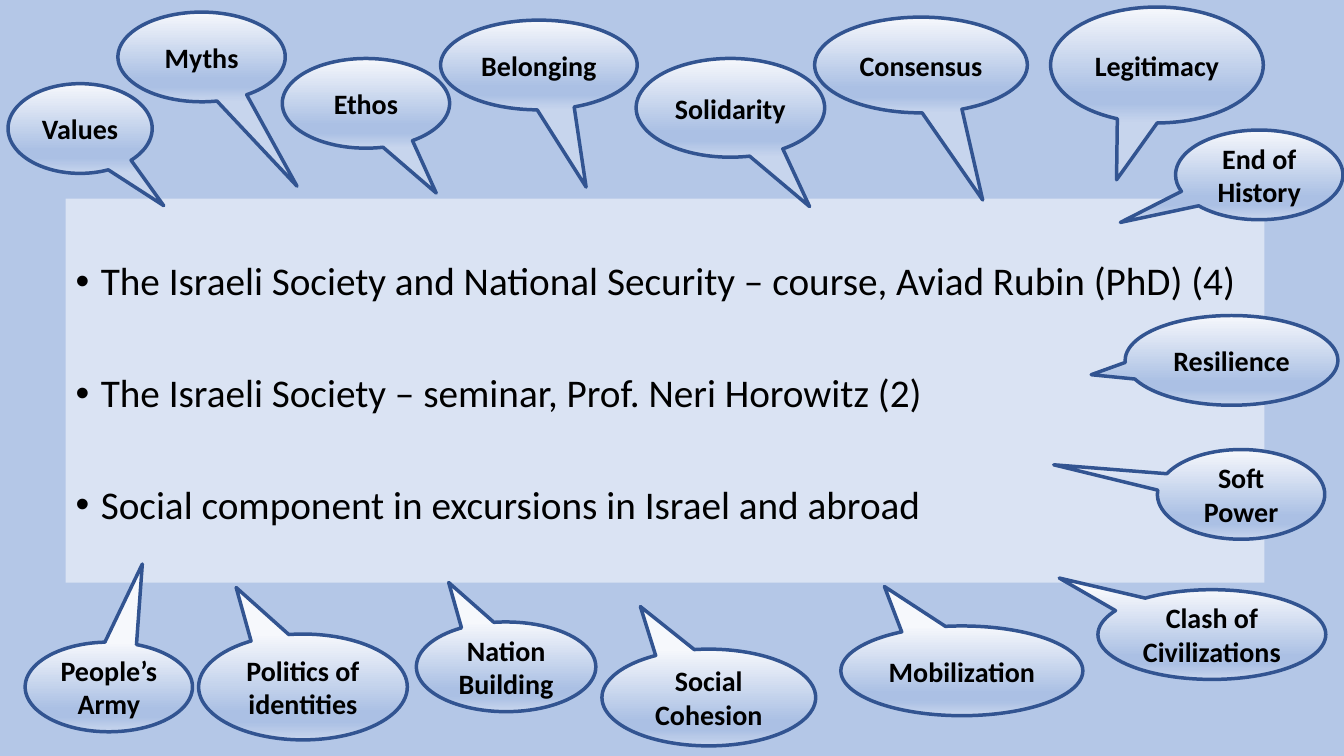
from lxml import etree
from pptx import Presentation
from pptx.dml.color import RGBColor
from pptx.enum.shapes import MSO_SHAPE
from pptx.enum.text import MSO_ANCHOR, MSO_AUTO_SIZE, PP_ALIGN
from pptx.oxml.ns import qn
from pptx.util import Inches, Pt

CALLOUT = MSO_SHAPE.OVAL_CALLOUT
CENTER, LEFT = PP_ALIGN.CENTER, PP_ALIGN.LEFT
MIDDLE, TOP = MSO_ANCHOR.MIDDLE, MSO_ANCHOR.TOP
NO_FIT = MSO_AUTO_SIZE.NONE

BLACK = RGBColor(0x00, 0x00, 0x00)
SKY = RGBColor(0xB4, 0xC7, 0xE7)
PANEL = RGBColor(0xDA, 0xE3, 0xF3)
OUTLINE = RGBColor(0x32, 0x54, 0x91)
FROST = RGBColor(0xF6, 0xF8, 0xFC)
STEEL = RGBColor(0xAB, 0xC0, 0xE4)
MIST = RGBColor(0xC7, 0xD5, 0xED)
BUBBLE_STOPS = [(0, FROST), (74, STEEL), (83, STEEL), (100, MIST)]

# Grid of 133.3 columns by 75 rows
WIDTH, HEIGHT = Inches(13.33), Inches(7.5)
COLS, ROWS = 133.3, 75
BUBBLE_W, BUBBLE_H = 16.6, 8.9

COURSES = [
    "The Israeli Society and National Security – course, Aviad Rubin (PhD) (4)",
    "The Israeli Society – seminar, Prof. Neri Horowitz (2)",
    "Social component in excursions in Israel and abroad",
]

# Text, column, row, tail tip as shares of the bubble, width, height
BUBBLES = [
    # Below the panel
    ("Mobilization", 83.4, 62.1, (-0.32, -0.94), 24, BUBBLE_H),
    ("Social Cohesion", 59.7, 64.4, (-0.32, -0.94), 21.2, 9.6),
    ("Nation Building", 41.3, 61.7, (-0.32, -0.94), 17.8, BUBBLE_H),
    ("Politics of identities", 19.7, 62.9, (-0.32, -0.94), 20.7, 10.5),
    ("People’s Army", 2.5, 63.7, (0.2, -1.37), BUBBLE_W, BUBBLE_H),
    # Above the panel
    ("Myths", 11.7, 1.2, (0.57, 1.44), BUBBLE_W, BUBBLE_H),
    ("Values", 0.8, 8.3, (0.58, 0.86), 14.3, BUBBLE_H),
    ("Ethos", 28, 5.8, (0.42, 1), BUBBLE_W, BUBBLE_H),
    ("Belonging", 43.7, 2, (0.24, 1.36), 19.5, BUBBLE_H),
    ("Solidarity", 63.1, 5.8, (0.42, 1), 18.7, 9.8),
    ("Consensus", 80.8, 1.7, (0.29, 1.41), 21.1, 9.5),
    ("Legitimacy", 104.2, 0.7, (-0.19, 0.99), 21.1, 11.5),
    # Right of the panel
    ("Clash of Civilizations", 108.9, 58.5, (-0.67, -0.63), 22.6, BUBBLE_H),
    ("End of History", 116.6, 12.9, (-0.83, 0.53), BUBBLE_W, BUBBLE_H),
    ("Soft Power", 114.8, 44.6, (-1.12, -0.33), BUBBLE_W, BUBBLE_H),
    ("Resilience", 111.6, 31.3, (-0.66, 0.16), 21.1, BUBBLE_H),
]


class Deck:
    font = "Calibri"
    list_size = Pt(28)
    bubble_size = Pt(20)

    def __init__(self):
        self.prs = Presentation()
        self.prs.slide_width, self.prs.slide_height = WIDTH, HEIGHT
        self.s = None

    def slide(self, color):
        self.s = self.prs.slides.add_slide(self.prs.slide_layouts[1])
        fill = self.s.background.fill
        fill.solid()
        fill.fore_color.rgb = color
        title = self.s.shapes.title
        title.element.getparent().remove(title.element)

    def box(self, col, row, w, h):
        return (int(WIDTH * col / COLS), int(HEIGHT * row / ROWS),
                int(WIDTH * w / COLS), int(HEIGHT * h / ROWS))

    def run(self, p, text, size, bold=False):
        r = p.add_run()
        r.text = text
        r.font.name, r.font.size, r.font.bold = self.font, size, bold
        r.font.color.rgb = BLACK

    def bullets(self, items, col, row, w, h):
        sp = self.s.placeholders[1]
        sp.left, sp.top, sp.width, sp.height = self.box(col, row, w, h)
        sp.fill.solid()
        sp.fill.fore_color.rgb = PANEL
        tf = sp.text_frame
        tf.word_wrap, tf.auto_size = True, NO_FIT
        tf.vertical_anchor, tf.margin_top = TOP, Inches(0.63)
        for i, item in enumerate(items):
            p = tf.add_paragraph() if i else tf.paragraphs[0]
            pPr = p._p.get_or_add_pPr()
            pPr.set("marL", str(Inches(0.25)))
            pPr.set("indent", str(-Inches(0.25)))
            etree.SubElement(pPr, qn("a:buFont")).set("typeface", "Arial")
            etree.SubElement(pPr, qn("a:buChar")).set("char", "•")
            p.alignment, p.line_spacing = LEFT, 0.9
            p.space_before = Pt(49.5 if i else 0)
            self.run(p, item, self.list_size)

    def gradient(self, sp, stops):
        sp.fill.gradient()
        sp.fill.gradient_angle = 270
        gs_lst = sp.element.spPr.find(".//" + qn("a:gsLst"))
        for gs in list(gs_lst):
            gs_lst.remove(gs)
        for share, color in stops:
            gs = etree.SubElement(gs_lst, qn("a:gs"), pos=str(share * 1000))
            etree.SubElement(gs, qn("a:srgbClr"), val=str(color))

    def bubble(self, text, col, row, tail, w, h):
        sp = self.s.shapes.add_shape(CALLOUT, *self.box(col, row, w, h))
        sp.shadow.inherit = False
        sp.adjustments[0], sp.adjustments[1] = tail
        self.gradient(sp, BUBBLE_STOPS)
        sp.line.color.rgb, sp.line.width = OUTLINE, Pt(2.5)
        tf = sp.text_frame
        tf.word_wrap, tf.vertical_anchor = True, MIDDLE
        p = tf.paragraphs[0]
        p.alignment = CENTER
        self.run(p, text, self.bubble_size, bold=True)


def main():
    deck = Deck()
    deck.slide(SKY)
    # Course list
    deck.bullets(COURSES, 6.5, 19.7, 118.9, 38.1)
    # Concepts around it
    for bubble in BUBBLES:
        deck.bubble(*bubble)
    deck.prs.save("out.pptx")


if __name__ == "__main__":
    main()
